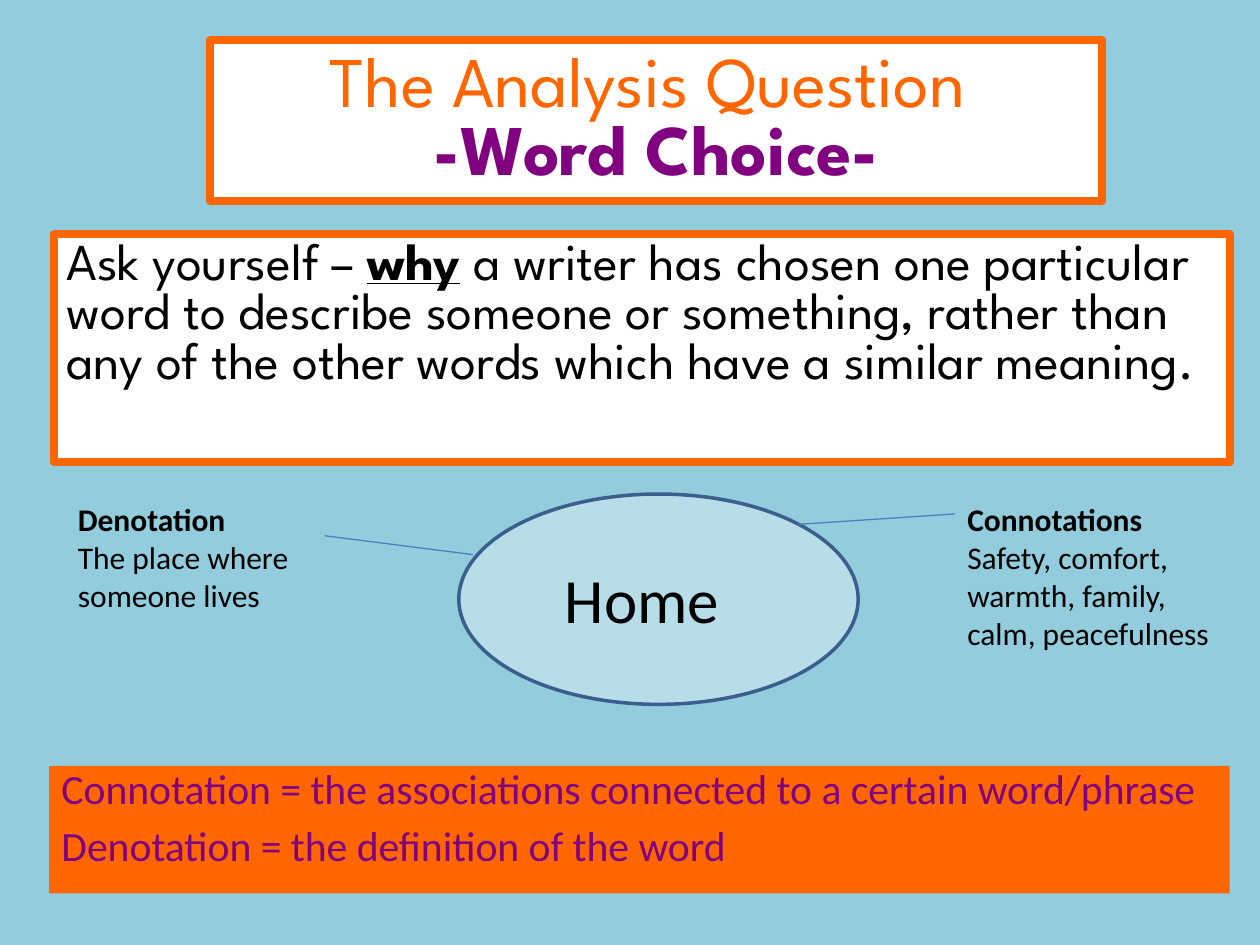
from pptx import Presentation
from pptx.dml.color import RGBColor
from pptx.enum.shapes import MSO_CONNECTOR, MSO_SHAPE
from pptx.enum.text import MSO_ANCHOR, PP_ALIGN
from pptx.oxml.ns import qn
from pptx.util import Cm, Pt
from lxml.etree import SubElement

COLORS = {
    "background": "93CDDD", "white": "FFFFFF", "orange": "FF6600",
    "purple": "800080", "black": "000000", "bubble": "B7DEE8",
    "bubble_line": "3A5F8C", "connector": "4B7EBC",
}

TITLE = {"name": "League Spartan", "size": Pt(40.7)}
BODY = {"name": "League Spartan", "size": Pt(29.6)}
DEFINITION = {"name": "Calibri", "size": Pt(23.8)}
WORD = {"name": "Calibri", "size": Pt(36)}
NOTE = {"name": "Calibri", "size": Pt(18)}
BOLD = {"bold": True}
STRESSED = {"bold": True, "underline": True}

TIGHT = {"line_spacing": 0.8}
CENTERED = {"alignment": PP_ALIGN.CENTER}

PANELS = [
    {"box": (4.24, 0.81, 17.98, 3.25), "fill": "white", "line": ("orange", 4.5),
     "font": TITLE, "layout": TIGHT | CENTERED, "anchor": MSO_ANCHOR.MIDDLE,
     "text": [[("The Analysis Question ", "orange", {})],
              [("-Word Choice-", "purple", BOLD)]]},
    {"box": (1.09, 4.72, 23.7, 4.6), "fill": "white", "line": ("orange", 4.5),
     "font": BODY, "layout": TIGHT,
     "text": [[("Ask yourself – ", "black", {}),
               ("why", "black", STRESSED),
               (" a writer has chosen one particular word to describe someone or "
                "something, rather than any of the other words which have a "
                "similar meaning.", "black", {})]]},
    {"box": (0.99, 15.44, 23.8, 2.57), "fill": "orange",
     "font": DEFINITION, "layout": TIGHT, "gap": 10,
     "text": [[("Connotation = the associations connected to a certain word/phrase",
                "purple", {})],
              [("Denotation = the definition of the word", "purple", {})]]},
    {"box": (9.25, 9.96, 8.05, 4.24), "kind": MSO_SHAPE.OVAL,
     "fill": "bubble", "line": ("bubble_line", 2)},
]

LABELS = [
    {"box": (9.98, 11.18, 5.92, 1.8), "font": WORD, "layout": CENTERED,
     "text": [[("Home", "black", {})]]},
    {"box": (1.32, 9.96, 5.26, 2.57), "font": NOTE,
     "text": [[("Denotation", "black", BOLD)],
              [("The place where someone lives", "black", {})]]},
    {"box": (19.25, 9.96, 5.54, 3.33), "font": NOTE,
     "text": [[("Connotations", "black", BOLD)],
              [("Safety, comfort, warmth, family, calm, peacefulness", "black", {})]]},
]

CONNECTORS = [(9.53, 11.18, 6.55, 10.8), (16.1, 10.57, 19.25, 10.36)]


def color(name):
    return RGBColor.from_string(COLORS[name])


def lengths(values):
    return [Cm(value) for value in values]


def apply(target, values):
    for name, value in values.items():
        setattr(target, name, value)


def write(shape, item):
    frame = shape.text_frame
    frame.word_wrap = True
    frame.vertical_anchor = item.get("anchor", MSO_ANCHOR.TOP)
    for index, runs in enumerate(item.get("text", [])):
        paragraph = frame.add_paragraph() if index else frame.paragraphs[0]
        apply(paragraph, {"alignment": PP_ALIGN.LEFT} | item.get("layout", {}))
        if index:
            paragraph.space_before = Pt(item.get("gap", 0))
        for text, tone, style in runs:
            run = paragraph.add_run()
            run.text = text
            apply(run.font, item["font"] | style)
            run.font.color.rgb = color(tone)


def add_panel(slide, item):
    kind = item.get("kind", MSO_SHAPE.RECTANGLE)
    shape = slide.shapes.add_shape(kind, *lengths(item["box"]))
    shape.shadow.inherit = False
    shape.fill.solid()
    shape.fill.fore_color.rgb = color(item["fill"])
    if "line" in item:
        tone, width = item["line"]
        shape.line.color.rgb = color(tone)
        shape.line.width = Pt(width)
    else:
        shape.line.fill.background()
    write(shape, item)


def add_line(slide, ends):
    connector = slide.shapes.add_connector(MSO_CONNECTOR.STRAIGHT, *lengths(ends))
    connector.line.color.rgb = color("connector")
    connector.line.width = Pt(0.75)
    SubElement(connector._element.spPr, qn("a:effectLst"))


def main():
    presentation = Presentation()
    presentation.slide_width, presentation.slide_height = Cm(25.4), Cm(19.05)
    slide = presentation.slides.add_slide(presentation.slide_layouts[6])
    slide.background.fill.solid()
    slide.background.fill.fore_color.rgb = color("background")
    for item in PANELS:
        add_panel(slide, item)
    for item in LABELS:
        write(slide.shapes.add_textbox(*lengths(item["box"])), item)
    for ends in CONNECTORS:
        add_line(slide, ends)
    presentation.save("out.pptx")


if __name__ == "__main__":
    main()
